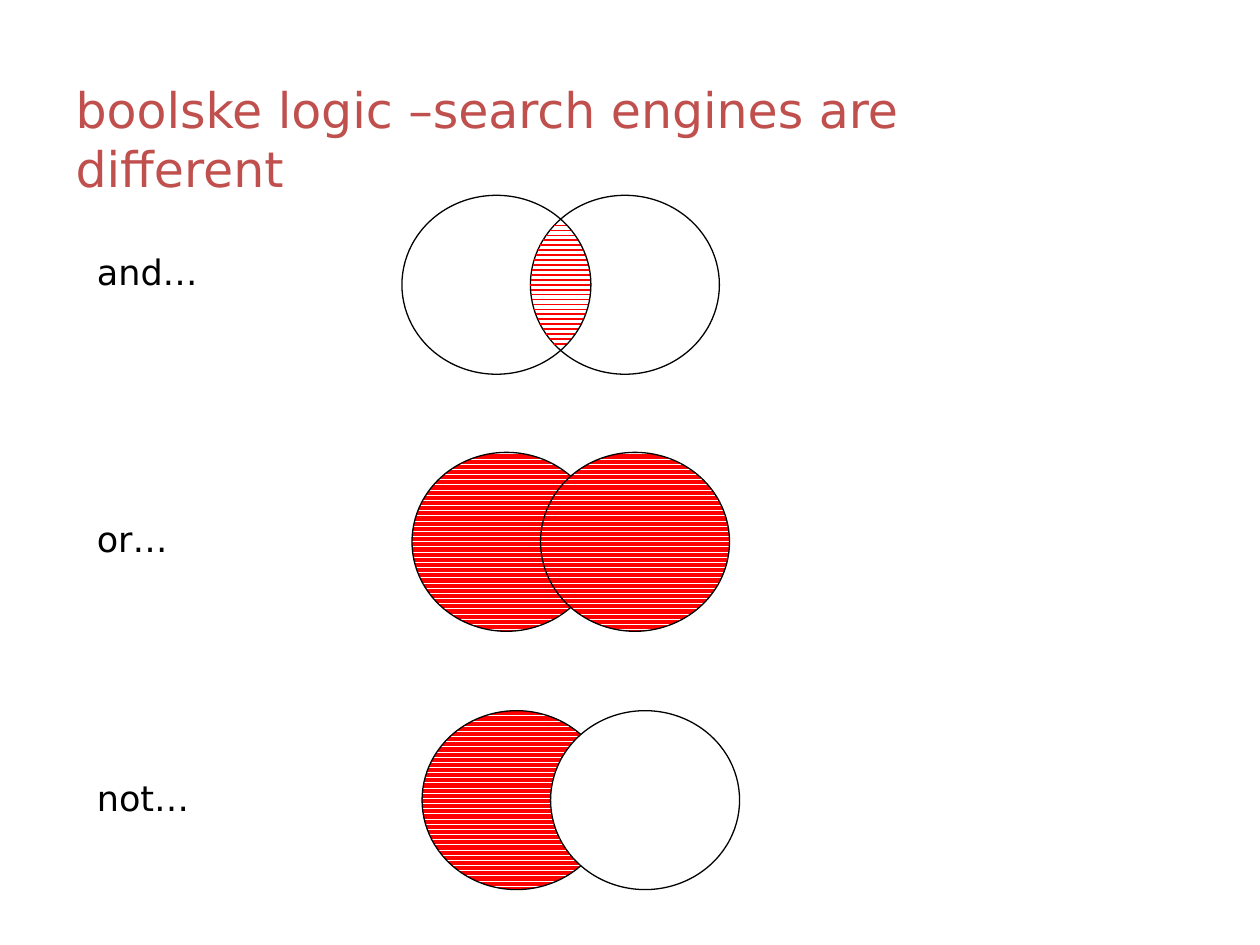
"""Build a slide that explains the boolean search operators with Venn diagrams."""
from math import sqrt

from lxml.etree import SubElement
from pptx import Presentation
from pptx.dml.color import RGBColor as RGB
from pptx.enum.dml import MSO_PATTERN as Pattern
from pptx.enum.shapes import MSO_CONNECTOR as Connector, MSO_SHAPE as Shape
from pptx.enum.text import MSO_ANCHOR as Anchor, MSO_AUTO_SIZE as AutoSize, PP_ALIGN as Align
from pptx.oxml.ns import qn
from pptx.util import Inches, Pt

TITLE = "boolske logic –search engines are different"
OPERATORS = [
    {"label": "and…", "label_top": 1.94, "left": 3.19, "top": 1.55, "fills": ("none", "plain")},
    {"label": "or…", "label_top": 4.06, "left": 3.27, "top": 3.59, "fills": ("hatch", "hatch")},
    {"label": "not…", "label_top": 6.11, "left": 3.35, "top": 5.64, "fills": ("hatch", "plain")},
]
THEME = {
    "font": "DejaVu Sans", "title_size": 28, "label_size": 20,
    "title": RGB(0xC0, 0x50, 0x4D), "ink": RGB(0, 0, 0),
    "accent": RGB(0xFF, 0, 0), "paper": RGB(0xFF, 0xFF, 0xFF),
    "outline": 0.75, "hatch": 1,
}
CIRCLE_W, CIRCLE_H, CIRCLE_SHIFT = 1.5, 1.42, 1.02
HATCH_COUNT, HATCH_SPAN = 25, 0.94


def place(part, left, top, width, height):
    part.left, part.top = Inches(left), Inches(top)
    part.width, part.height = Inches(width), Inches(height)


def write(part, wording, size, color):
    frame = part.text_frame
    frame.text = wording
    frame.word_wrap = True
    frame.auto_size = AutoSize.SHAPE_TO_FIT_TEXT
    frame.vertical_anchor = Anchor.TOP
    paragraph = frame.paragraphs[0]
    paragraph.alignment = Align.LEFT
    font = paragraph.runs[0].font
    font.name, font.size, font.color.rgb = THEME["font"], Pt(size), color


def add_circle(shapes, left, top, style):
    circle = shapes.add_shape(Shape.OVAL, Inches(left), Inches(top),
                              Inches(CIRCLE_W), Inches(CIRCLE_H))
    circle.shadow.inherit = False
    circle.line.color.rgb = THEME["ink"]
    circle.line.width = Pt(THEME["outline"])
    if style == "none":
        circle.fill.background()
    elif style == "plain":
        circle.fill.solid()
        circle.fill.fore_color.rgb = THEME["paper"]
    else:
        circle.fill.patterned()
        circle.fill.pattern = Pattern.DARK_HORIZONTAL
        circle.fill.fore_color.rgb = THEME["accent"]
        circle.fill.back_color.rgb = THEME["paper"]


def add_overlap_hatch(shapes, left, top):
    middle_x = left + (CIRCLE_W + CIRCLE_SHIFT) / 2
    middle_y = top + CIRCLE_H / 2
    for index in range(HATCH_COUNT):
        offset = HATCH_SPAN * (index / (HATCH_COUNT - 1) - 0.5)
        reach = CIRCLE_W / 2 * sqrt(1 - (offset / (CIRCLE_H / 2)) ** 2) - CIRCLE_SHIFT / 2
        y = Inches(middle_y + offset)
        stroke = shapes.add_connector(Connector.STRAIGHT, Inches(middle_x - reach), y,
                                      Inches(middle_x + reach), y)
        stroke.line.color.rgb = THEME["accent"]
        stroke.line.width = Pt(THEME["hatch"])
        SubElement(stroke._element.spPr, qn("a:effectLst"))


def add_operator(shapes, operator):
    left, top = operator["left"], operator["top"]
    left_fill, right_fill = operator["fills"]
    right = left + CIRCLE_SHIFT
    if left_fill == "none":
        add_circle(shapes, right, top, right_fill)
        add_overlap_hatch(shapes, left, top)
        add_circle(shapes, left, top, left_fill)
    else:
        add_circle(shapes, left, top, left_fill)
        add_circle(shapes, right, top, right_fill)
    label = shapes.add_textbox(Inches(0.67), Inches(operator["label_top"]),
                               Inches(1.89), Inches(0.43))
    write(label, operator["label"], THEME["label_size"], THEME["ink"])


def main():
    deck = Presentation()
    deck.slide_width, deck.slide_height = Inches(10), Inches(7.5)
    slide = deck.slides.add_slide(deck.slide_layouts[5])
    title = slide.shapes.title
    place(title, 0.5, 0.58, 8, 1.04)
    write(title, TITLE, THEME["title_size"], THEME["title"])
    for operator in OPERATORS:
        add_operator(slide.shapes, operator)
    deck.save("out.pptx")


if __name__ == "__main__":
    main()
